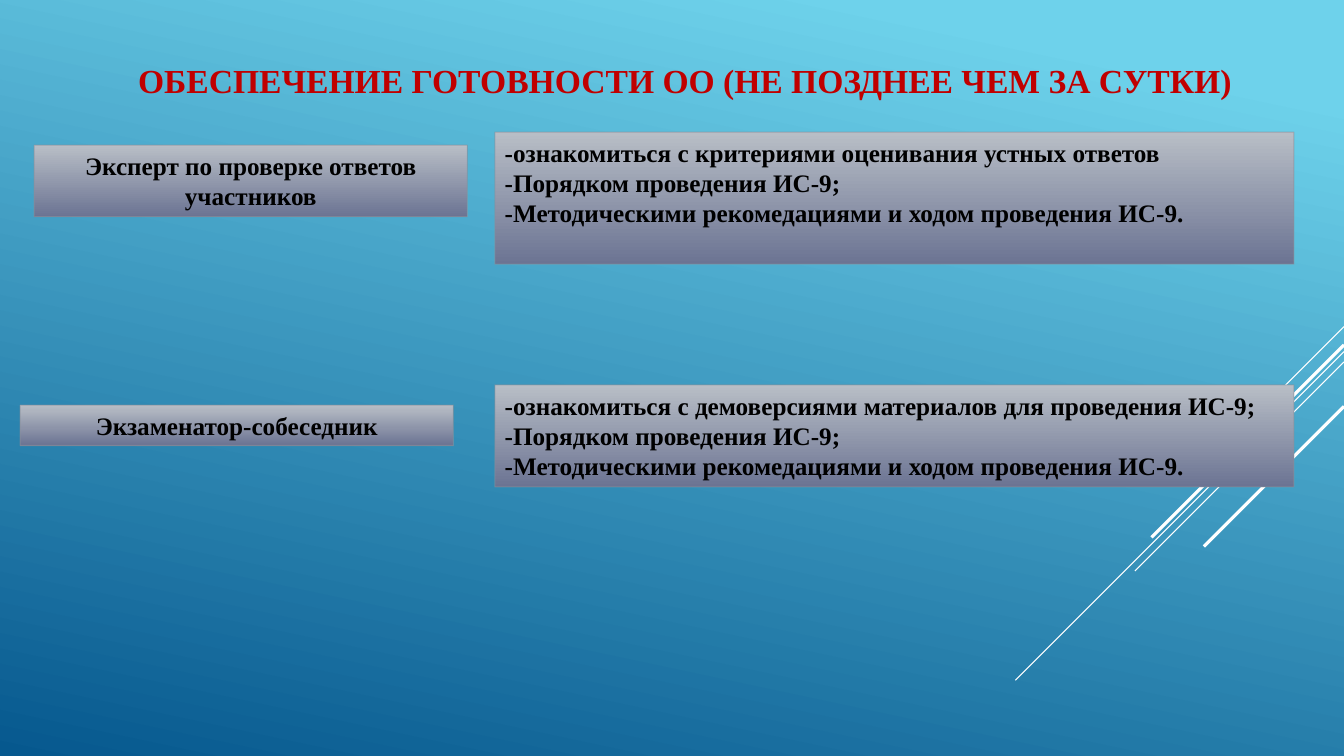
"""Build the slide on preparing a school for the oral interview."""
from dataclasses import dataclass

from lxml import etree
from pptx import Presentation
from pptx.dml.color import RGBColor
from pptx.enum.shapes import MSO_CONNECTOR, MSO_SHAPE
from pptx.enum.text import MSO_ANCHOR, MSO_AUTO_SIZE, PP_ALIGN
from pptx.oxml.ns import qn
from pptx.util import Cm, Pt

STRAIGHT = MSO_CONNECTOR.STRAIGHT
RECTANGLE = MSO_SHAPE.RECTANGLE
TOP, MIDDLE = MSO_ANCHOR.TOP, MSO_ANCHOR.MIDDLE
FIXED_SIZE = MSO_AUTO_SIZE.NONE
LEFT, CENTER = PP_ALIGN.LEFT, PP_ALIGN.CENTER


@dataclass(frozen=True)
class Theme:
    """Colours, font and type sizes of the slide."""
    sky: tuple = ((0.1, "6ED2EB"), (1, "06588E"))
    panel: tuple = ((0, "B8BEC6"), (1, "6C7493"))
    border: str = "89919C"
    ray: str = "FFFFFF"
    heading: str = "C00000"
    text: str = "000000"
    font: str = "Times New Roman"
    heading_size: int = 24
    text_size: int = 18


THEME = Theme()


def paint_gradient(fill, stops, angle):
    fill.gradient()
    fill.gradient_angle = angle
    for stop, (position, color) in zip(fill.gradient_stops, stops):
        stop.position = position
        stop.color.rgb = RGBColor.from_string(color)


def write_lines(frame, lines, align, anchor, size, color):
    frame.word_wrap = True
    frame.auto_size = FIXED_SIZE
    frame.vertical_anchor = anchor
    for number, line in enumerate(lines):
        para = frame.add_paragraph() if number else frame.paragraphs[0]
        para.text = line
        para.alignment = align
        para.font.name = THEME.font
        para.font.size = Pt(size)
        para.font.bold = True
        para.font.color.rgb = RGBColor.from_string(color)


deck = Presentation()
deck.slide_width, deck.slide_height = Cm(33.87), Cm(19.05)
page = deck.slides.add_slide(deck.slide_layouts[5])
paint_gradient(page.background.fill, THEME.sky, 258)

RAYS = [
    (8.23, 2.54, 0.75),
    (8.86, 8.28, 0.75),
    (9.12, 5.27, 0.75),
    (8.69, 4.85, 2.25),
    (10.24, 3.53, 2.25),
]
for top, reach, width in RAYS:
    ray = page.shapes.add_connector(
        STRAIGHT, Cm(33.87), Cm(top), Cm(33.87 - reach), Cm(top + reach))
    ray.line.color.rgb = RGBColor.from_string(THEME.ray)
    ray.line.width = Pt(width)
    etree.SubElement(ray.line._get_or_add_ln().getparent(), qn("a:effectLst"))

title = page.shapes.title
title.left, title.top, title.width, title.height = Cm(1.9), Cm(0.86), Cm(30.73), Cm(2.31)
write_lines(title.text_frame, ["ОБЕСПЕЧЕНИЕ ГОТОВНОСТИ ОО (НЕ ПОЗДНЕЕ ЧЕМ ЗА СУТКИ)"],
            CENTER, MIDDLE, THEME.heading_size, THEME.heading)

SHARED_DUTIES = [
    "-Порядком проведения ИС-9;",
    "-Методическими рекомедациями и ходом проведения ИС-9.",
]
PANELS = [
    (0.86, 3.66, 10.92, 1.8, CENTER, ["Эксперт по проверке ответов участников"]),
    (0.51, 10.21, 10.92, 1.02, CENTER, ["Экзаменатор-собеседник"]),
    (12.47, 3.33, 20.14, 3.33, LEFT,
     ["-ознакомиться с критериями оценивания устных ответов", *SHARED_DUTIES]),
    (12.47, 9.7, 20.14, 2.57, LEFT,
     ["-ознакомиться с демоверсиями материалов для проведения ИС-9;", *SHARED_DUTIES]),
]
for left, top, width, height, align, lines in PANELS:
    box = page.shapes.add_shape(RECTANGLE, Cm(left), Cm(top), Cm(width), Cm(height))
    box.shadow.inherit = False
    paint_gradient(box.fill, THEME.panel, 270)
    box.line.color.rgb = RGBColor.from_string(THEME.border)
    box.line.width = Pt(0.75)
    border_color = box.line._get_or_add_ln().find(".//" + qn("a:srgbClr"))
    etree.SubElement(border_color, qn("a:alpha"), val="60000")
    write_lines(box.text_frame, lines, align, TOP, THEME.text_size, THEME.text)

deck.save("out.pptx")
